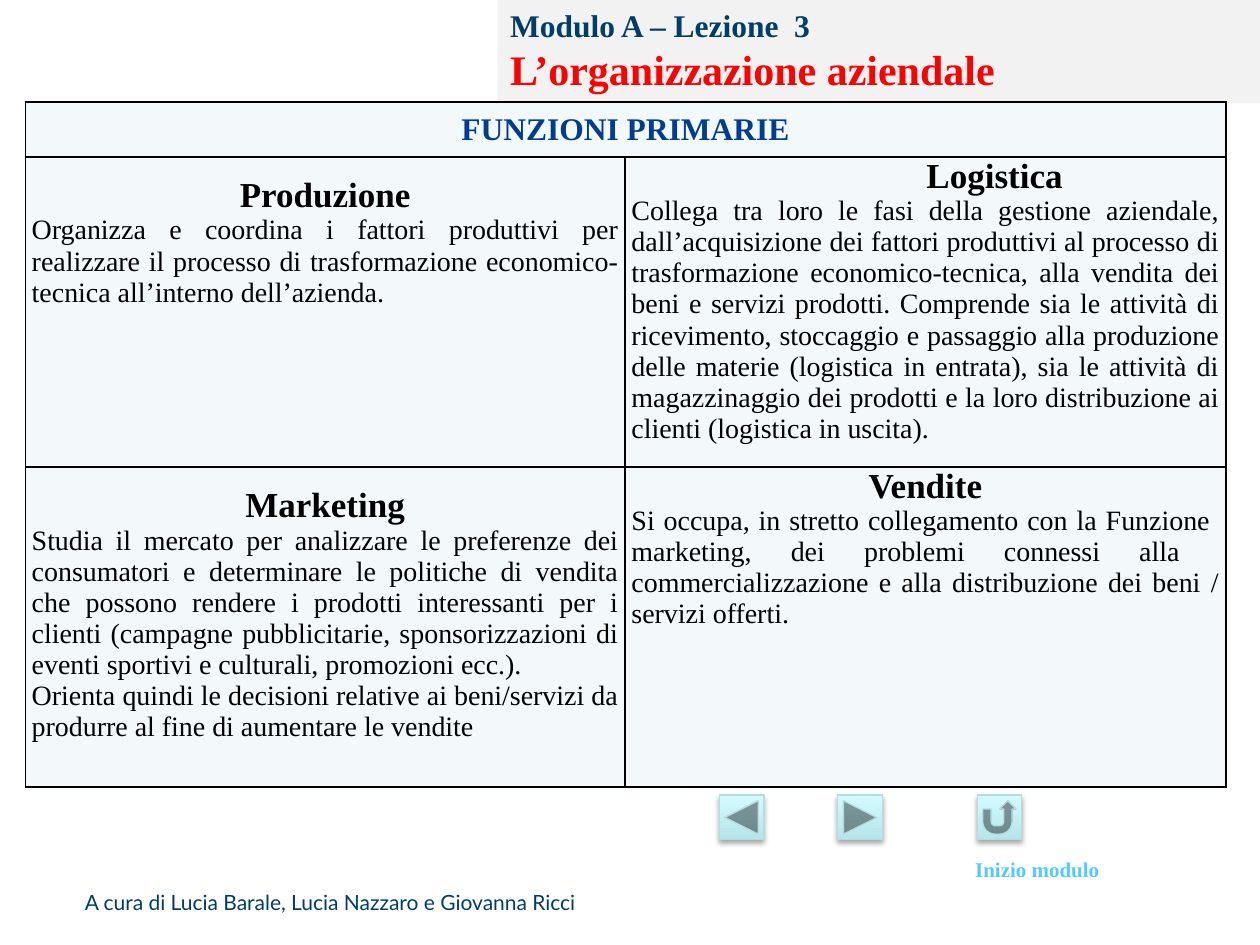
from lxml import etree
from pptx import Presentation
from pptx.dml.color import RGBColor
from pptx.enum.shapes import MSO_SHAPE as Shape
from pptx.enum.text import MSO_ANCHOR as Anchor, MSO_AUTO_SIZE as Auto, PP_ALIGN as Align
from pptx.oxml import parse_xml
from pptx.oxml.ns import nsdecls, qn
from pptx.util import Cm, Pt

NAVY = RGBColor(0x00, 0x3D, 0x67)
RED = RGBColor(0xFF, 0x00, 0x00)
BLUE = RGBColor(0x00, 0x3D, 0x91)
SKY = RGBColor(0x52, 0xCA, 0xFE)
BLACK = RGBColor(0x00, 0x00, 0x00)
GREY = RGBColor(0xF2, 0xF2, 0xF2)
PALE = RGBColor(0xF3, 0xF9, 0xFA)
EDGE = RGBColor(0xB6, 0xDC, 0xDF)
DARK = RGBColor(0xB5, 0xE5, 0xE9)
LIGHT = RGBColor(0xD3, 0xFB, 0xFF)
SERIF = "Times New Roman"


def style(run, size, color, bold=False, face=SERIF):
    font = run.font
    font.name, font.size, font.bold = face, Pt(size), bold
    font.color.rgb = color


def paint(cell):
    cell.margin_left = cell.margin_right = Cm(0.13)
    cell.margin_top = cell.margin_bottom = 0
    props = cell._tc.get_or_add_tcPr()
    for side in ("lnL", "lnR", "lnT", "lnB"):
        props.append(parse_xml(
            f'<a:{side} {nsdecls("a")} w="12700"><a:solidFill>'
            f'<a:srgbClr val="000000"/></a:solidFill></a:{side}>'))
    cell.fill.solid()
    cell.fill.fore_color.rgb = PALE


deck = Presentation()
deck.slide_width, deck.slide_height = Cm(25.4), Cm(19.05)
slide = deck.slides.add_slide(deck.slide_layouts[5])
shapes = slide.shapes

title = shapes.title
title.left, title.top, title.width, title.height = Cm(10.03), Cm(-0.08), Cm(15.47), Cm(2.16)
title.fill.solid()
title.fill.fore_color.rgb = GREY
frame = title.text_frame
frame.text = "Modulo A – Lezione  3\vL’organizzazione aziendale"
frame.auto_size = Auto.NONE
frame.vertical_anchor = Anchor.MIDDLE
head = frame.paragraphs[0]
head.alignment = Align.LEFT
for run, size, color in zip(head.runs, (18, 24), (NAVY, RED)):
    style(run, size, color, True)

grid = shapes.add_table(3, 2, Cm(0.51), Cm(2.06), Cm(24.2), Cm(13.8)).table
for col, width in zip(grid.columns, (12.09, 12.11)):
    col.width = Cm(width)
for row, height in zip(grid.rows, (1.1, 6.25, 6.45)):
    row.height = Cm(height)
for cell in grid.iter_cells():
    paint(cell)

top = grid.cell(0, 0)
top.merge(grid.cell(0, 1))
top.text_frame.text = "FUNZIONI PRIMARIE"
top.vertical_anchor = Anchor.MIDDLE
label = top.text_frame.paragraphs[0]
label.alignment = Align.CENTER
style(label.runs[0], 18, BLUE, True)

cards = [
    (1, 0, "Produzione", 1.5, 0, [
        "Organizza e coordina i fattori produttivi per realizzare il processo di "
        "trasformazione economico-tecnica all’interno dell’azienda."]),
    (1, 1, "Logistica", 1, 2.79, [
        "Collega tra loro le fasi della gestione aziendale, dall’acquisizione dei fattori "
        "produttivi al processo di trasformazione economico-tecnica, alla vendita dei beni e "
        "servizi prodotti. Comprende sia le attività di ricevimento, stoccaggio e passaggio "
        "alla produzione delle materie (logistica in entrata), sia le attività di "
        "magazzinaggio dei prodotti e la loro distribuzione ai clienti (logistica in uscita)."]),
    (2, 0, "Marketing", 1.5, 0, [
        "Studia il mercato per analizzare le preferenze dei consumatori e determinare le "
        "politiche di vendita che possono rendere i prodotti interessanti per i clienti "
        "(campagne pubblicitarie, sponsorizzazioni di eventi sportivi e culturali, "
        "promozioni ecc.).",
        "Orienta quindi le decisioni relative ai beni/servizi da produrre al fine di "
        "aumentare le vendite"]),
    (2, 1, "Vendite", 1, 0, [
        "Si occupa, in stretto collegamento con la Funzione  marketing, dei problemi connessi "
        "alla  commercializzazione e alla distribuzione dei beni / servizi offerti."]),
]
for row, col, name, space, indent, body in cards:
    frame = grid.cell(row, col).text_frame
    frame.text = "\n".join([name] + body)
    head, *rest = frame.paragraphs
    head.alignment = Align.CENTER
    head.line_spacing = float(space)
    if indent:
        head._p.get_or_add_pPr().set("marL", str(Cm(indent)))
    style(head.runs[0], 20, BLACK, True)
    for para in rest:
        para.alignment = Align.JUSTIFY
        style(para.runs[0], 16, BLACK)

buttons = [
    (14.5, Shape.ACTION_BUTTON_BACK_OR_PREVIOUS),
    (16.89, Shape.ACTION_BUTTON_FORWARD_OR_NEXT),
    (19.7, Shape.ACTION_BUTTON_RETURN),
]
for left, kind in buttons:
    button = shapes.add_shape(kind, Cm(left), Cm(16.03), Cm(0.9), Cm(0.9))
    button.fill.gradient()
    button.fill.gradient_angle = 90
    for stop, color, place in zip(button.fill.gradient_stops, (DARK, LIGHT), (0, 1)):
        stop.color.rgb = color
        stop.position = place
    button.line.color.rgb = EDGE
    button.line.width = Pt(0.75)
    button.shadow.inherit = False
    glow = button._element.spPr.find(qn("a:effectLst"))
    shade = etree.SubElement(glow, qn("a:outerShdw"), blurRad=str(Pt(3.1)),
                             dist=str(Pt(1.8)), dir="5400000", rotWithShape="0")
    tint = etree.SubElement(shade, qn("a:srgbClr"), val="000000")
    etree.SubElement(tint, qn("a:alpha"), val="35000")

notes = [
    (19.41, 17.15, 3.07, 0.76, 0.25, "Inizio modulo", SKY, True, SERIF, Anchor.TOP),
    (0.3, 17.32, 13.21, 1.73, 1.41, "A cura di Lucia Barale, Lucia Nazzaro e Giovanna Ricci",
     NAVY, False, "Lato", Anchor.MIDDLE),
]
for left, y, width, height, inset, words, color, bold, face, anchor in notes:
    frame = shapes.add_textbox(Cm(left), Cm(y), Cm(width), Cm(height)).text_frame
    frame.word_wrap = True
    frame.margin_left = Cm(inset)
    frame.vertical_anchor = anchor
    frame.text = words
    style(frame.paragraphs[0].runs[0], 12, color, bold, face)

deck.save("out.pptx")
